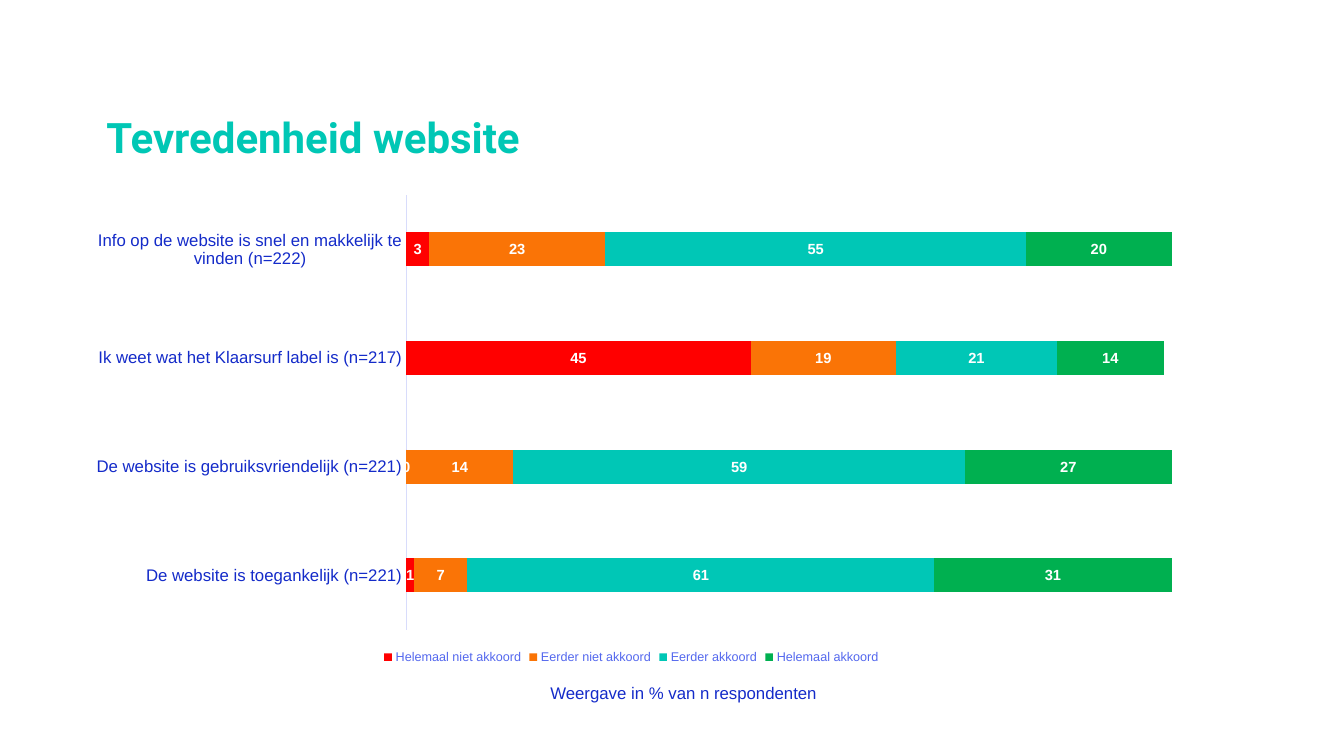
from dataclasses import dataclass

from lxml import etree
from pptx import Presentation
from pptx import util as u
from pptx.chart import data as cd
from pptx.dml.color import RGBColor
from pptx.enum import chart as ce
from pptx.enum import text
from pptx.oxml import ns

TEAL = RGBColor(0x00, 0xC7, 0xB5)
NAVY = RGBColor(0x14, 0x2B, 0xC9)
BLUE = RGBColor(0x54, 0x68, 0xEE)
PALE = RGBColor(0xD8, 0xDC, 0xFB)
RED = RGBColor(0xFF, 0x00, 0x00)
ORANGE = RGBColor(0xFA, 0x74, 0x06)
AQUA = RGBColor(0x00, 0xC7, 0xB6)
GREEN = RGBColor(0x00, 0xB0, 0x50)
WHITE = RGBColor(0xFF, 0xFF, 0xFF)


@dataclass(frozen=True)
class Answer:
    name: str
    values: tuple[int, ...]
    color: RGBColor


STATEMENTS = (
    "De website is toegankelijk (n=221)",
    "De website is gebruiksvriendelijk (n=221)",
    "Ik weet wat het Klaarsurf label is (n=217)",
    "Info op de website is snel en makkelijk te vinden (n=222)",
)
ANSWERS = (
    Answer("Helemaal niet akkoord", (1, 0, 45, 3), RED),
    Answer("Eerder niet akkoord", (7, 14, 19, 23), ORANGE),
    Answer("Eerder akkoord", (61, 59, 21, 55), AQUA),
    Answer("Helemaal akkoord", (31, 27, 14, 20), GREEN),
)
PLOT_LAYOUT = {"x": 0.3, "y": 0.02, "w": 0.68, "h": 0.9}


def set_font(font, size: float, color: RGBColor, name: str = "Arial", bold: bool = False) -> None:
    font.size = u.Pt(size)
    font.name = name
    font.bold = bold
    font.color.rgb = color


def add_text(slide, box: tuple[float, ...], words: str, wrap: bool = True):
    tf = slide.shapes.add_textbox(*map(u.Pt, box)).text_frame
    tf.word_wrap = wrap
    p = tf.paragraphs[0]
    p.text = words
    return tf, p


def fix_plot_area(chart) -> None:
    """Place the inner plot area at PLOT_LAYOUT, as fractions of the chart."""
    area = chart.element.find(".//" + ns.qn("c:plotArea"))
    for old in area.findall(ns.qn("c:layout")):
        area.remove(old)
    layout = etree.Element(ns.qn("c:layout"))
    manual = etree.SubElement(layout, ns.qn("c:manualLayout"))
    settings = {"layoutTarget": "inner", "xMode": "edge", "yMode": "edge", **PLOT_LAYOUT}
    for tag, value in settings.items():
        etree.SubElement(manual, ns.qn(f"c:{tag}")).set("val", str(value))
    area.insert(0, layout)


def add_answer_chart(slide) -> None:
    data = cd.CategoryChartData(number_format="0")
    data.categories = STATEMENTS
    for answer in ANSWERS:
        data.add_series(answer.name, answer.values)
    box = map(u.Pt, (49, 132.5, 804, 345))
    chart = slide.shapes.add_chart(ce.XL_CHART_TYPE.BAR_STACKED, *box, data).chart
    set_font(chart.font, 10, NAVY)
    chart.has_title = False
    chart.has_legend = True
    chart.legend.position = ce.XL_LEGEND_POSITION.BOTTOM
    chart.legend.include_in_layout = False
    set_font(chart.legend.font, 9, BLUE)

    axis = chart.category_axis
    axis.major_tick_mark = ce.XL_TICK_MARK.NONE
    axis.format.line.color.rgb = PALE
    axis.format.line.width = u.Pt(0.75)
    set_font(axis.tick_labels.font, 12, NAVY)
    scale = chart.value_axis
    scale.minimum_scale, scale.maximum_scale = 0, 100
    scale.has_major_gridlines = False
    scale.visible = False

    plot = chart.plots[0]
    plot.gap_width, plot.overlap = 219, 100
    plot.vary_by_categories = False
    for series, answer in zip(plot.series, ANSWERS):
        series.format.fill.solid()
        series.format.fill.fore_color.rgb = answer.color
        labels = series.data_labels
        labels.show_value = True
        labels.position = ce.XL_LABEL_POSITION.CENTER
        labels.number_format = "0"
        labels.number_format_is_linked = False
        set_font(labels.font, 10.5, WHITE, bold=True)
    fix_plot_area(chart)


def main() -> None:
    prs = Presentation()
    prs.slide_width, prs.slide_height = u.Pt(960), u.Pt(540)
    slide = prs.slides.add_slide(prs.slide_layouts[6])

    tf, p = add_text(slide, (69, 42, 731.5, 77.5), "Tevredenheid website")
    tf.vertical_anchor = text.MSO_ANCHOR.BOTTOM
    p.line_spacing = 0.9
    set_font(p.font, 30, TEAL, "Roboto", bold=True)

    add_answer_chart(slide)

    tf, p = add_text(slide, (386, 484, 206.5, 21.5), "Weergave in % van n respondenten", wrap=False)
    tf.auto_size = text.MSO_AUTO_SIZE.SHAPE_TO_FIT_TEXT
    set_font(p.font, 12, NAVY)

    prs.save("out.pptx")


if __name__ == "__main__":
    main()
